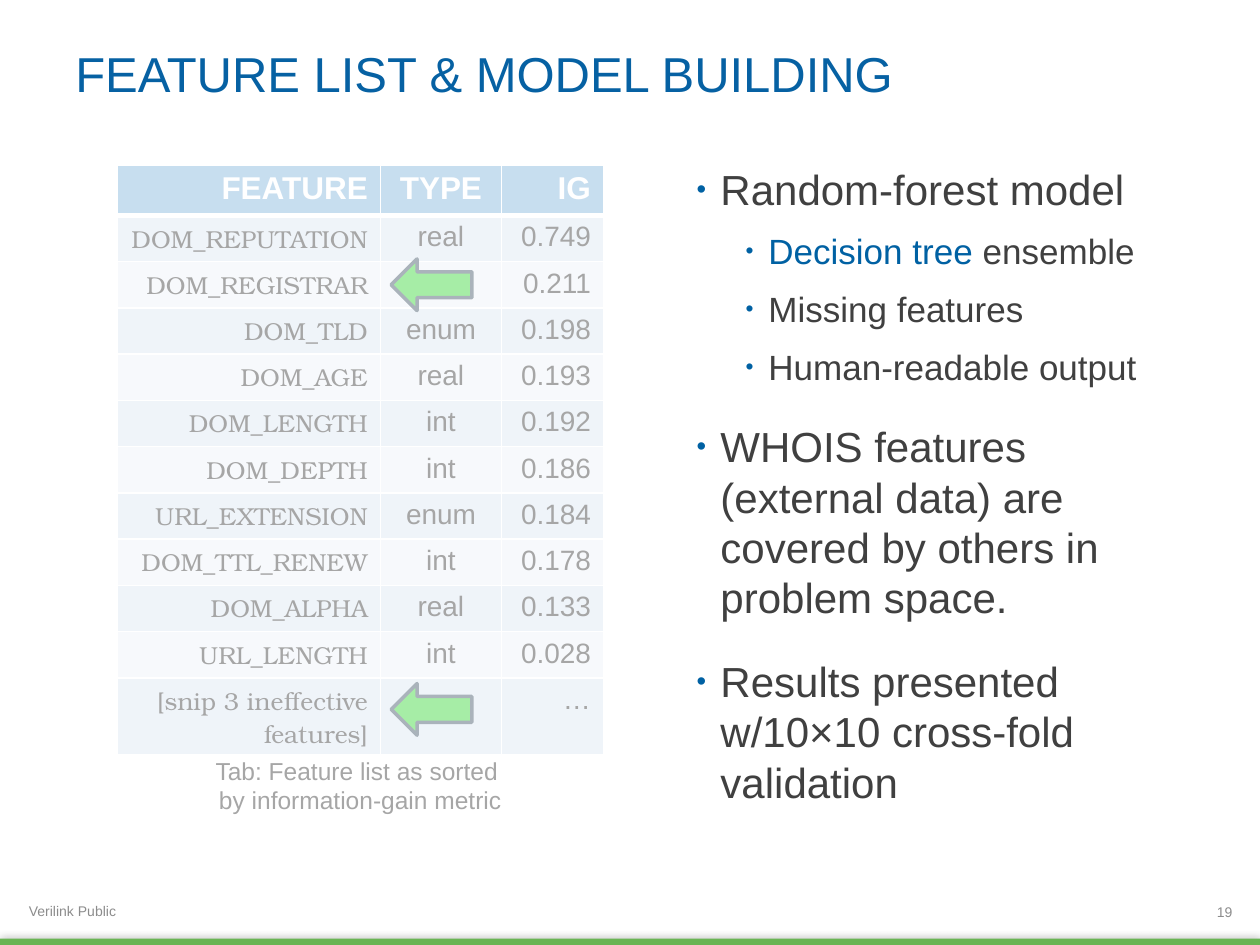
import pptx
import pptx.dml.color
import pptx.enum.shapes
import pptx.enum.text
import pptx.oxml
import pptx.oxml.ns
import pptx.util
from lxml import etree

Inches, Pt = pptx.util.Inches, pptx.util.Pt
ALIGN = pptx.enum.text.PP_ALIGN
ANCHOR = pptx.enum.text.MSO_ANCHOR
SHAPE = pptx.enum.shapes.MSO_SHAPE
qn = pptx.oxml.ns.qn

W, H = 10, 7.5
BLUE, DARK, GREY, WHITE, BLACK = "0061A3", "404040", "8C8C8C", "FFFFFF", "000000"
SANS, SERIF = "Arial", "TeX Gyre Bonum"
TABLE_LEFT, TABLE_TOP = 0.93, 1.31
COLUMNS = [2.09, 0.96, 0.81]
ROWS = [0.38] + [0.36] * 10 + [0.61]
COLUMN_ALIGN = [ALIGN.RIGHT, ALIGN.CENTER, ALIGN.RIGHT]
COLUMN_FONT = [(SERIF, 14), (SANS, 16), (SANS, 16)]

FEATURES = [
    ("FEATURE", "TYPE", "IG"),
    ("DOM_REPUTATION", "real", "0.749"),
    ("DOM_REGISTRAR", "", "0.211"),
    ("DOM_TLD", "enum", "0.198"),
    ("DOM_AGE", "real", "0.193"),
    ("DOM_LENGTH", "int", "0.192"),
    ("DOM_DEPTH", "int", "0.186"),
    ("URL_EXTENSION", "enum", "0.184"),
    ("DOM_TTL_RENEW", "int", "0.178"),
    ("DOM_ALPHA", "real", "0.133"),
    ("URL_LENGTH", "int", "0.028"),
    ("[snip 3 ineffective features]", "", "…"),
]

# level, space before, runs of (text, colour)
POINTS = [
    (0, 0, [("Random-forest model", DARK)]),
    (1, 9, [("Decision tree", BLUE), (" ensemble", DARK)]),
    (1, 9, [("Missing features", DARK)]),
    (1, 9, [("Human-readable output", DARK)]),
    (0, 19, [("WHOIS features (external data) are covered by others "
              "in problem space.", DARK)]),
    (0, 19, [("Results presented w/10×10 cross-fold validation", DARK)]),
]
# per level: left margin, hanging indent, text size
LEVELS = [(0.19, 0.19, 24), (0.57, 0.18, 20)]


def rgb(value):
    return pptx.dml.color.RGBColor.from_string(value)


def style(font, size, color, name=SANS, bold=False):
    font.size, font.name, font.bold = Pt(size), name, bold
    font.color.rgb = rgb(color)


def add_text(s, box, text, size, color, align=ALIGN.LEFT, anchor=ANCHOR.MIDDLE):
    tf = s.shapes.add_textbox(*map(Inches, box)).text_frame
    tf.word_wrap, tf.vertical_anchor = True, anchor
    p = tf.paragraphs[0]
    p.text, p.alignment = text, align
    for r in p.runs:
        style(r.font, size, color)


def add_shape(s, kind, box, fill, line=None):
    sp = s.shapes.add_shape(kind, *map(Inches, box))
    sp.shadow.inherit = False
    sp.fill.solid()
    sp.fill.fore_color.rgb = rgb(fill)
    if line:
        sp.line.color.rgb, sp.line.width = rgb(line), Pt(2)
    else:
        sp.line.fill.background()
    return sp


def add_glow_shadow(sp):
    """Soft shadow that spreads evenly around the shape."""
    effects = sp._element.spPr.find(qn("a:effectLst"))
    shadow = etree.SubElement(effects, qn("a:outerShdw"), blurRad=str(Pt(5)), dist="0")
    color = etree.SubElement(shadow, qn("a:srgbClr"), val=BLACK)
    etree.SubElement(color, qn("a:alpha"), val="40000")


def add_veil(s, box, opacity):
    """White sheet that fades whatever lies below it."""
    sp = add_shape(s, SHAPE.RECTANGLE, box, WHITE)
    color = sp._element.spPr.find(qn("a:solidFill"))[0]
    etree.SubElement(color, qn("a:alpha"), val=str(opacity * 1000))


def set_borders(cell, bottom):
    tcPr = cell._tc.get_or_add_tcPr()
    for i, (side, width) in enumerate(zip("LRTB", (1, 1, 1, bottom))):
        ln = etree.Element(qn("a:ln" + side), w=str(Pt(width)))
        fill = etree.SubElement(ln, qn("a:solidFill"))
        etree.SubElement(fill, qn("a:srgbClr"), val=WHITE)
        tcPr.insert(i, ln)


def fill_cell(cell, text, i, j):
    header = i == 0
    color = "61A1D4" if header else "D2E0EF" if i % 2 else "EAF0F7"
    cell.fill.solid()
    cell.fill.fore_color.rgb = rgb(color)
    set_borders(cell, 3 if header else 1)
    if not text:
        cell.margin_top = cell.margin_bottom = 0
        return
    p = cell.text_frame.paragraphs[0]
    p.text, p.alignment = text, COLUMN_ALIGN[j]
    name, size = (SANS, 18) if header else COLUMN_FONT[j]
    style(p.runs[0].font, size, WHITE if header else BLACK, name, header)


def add_feature_table(s):
    table = s.shapes.add_table(
        len(ROWS), len(COLUMNS), Inches(TABLE_LEFT), Inches(TABLE_TOP),
        Inches(sum(COLUMNS)), Inches(sum(ROWS))).table
    for column, width in zip(table.columns, COLUMNS):
        column.width = Inches(width)
    for i, row in enumerate(FEATURES):
        table.rows[i].height = Inches(ROWS[i])
        for j, text in enumerate(row):
            fill_cell(table.cell(i, j), text, i, j)


def add_bullet(p, margin, hang):
    pPr = p._p.get_or_add_pPr()
    pPr.set("marL", str(Inches(margin)))
    pPr.set("indent", str(-Inches(hang)))
    color = etree.SubElement(pPr, qn("a:buClr"))
    etree.SubElement(color, qn("a:srgbClr"), val=BLUE)
    etree.SubElement(pPr, qn("a:buSzPct"), val="65000")
    etree.SubElement(pPr, qn("a:buFont"), typeface=SANS)
    etree.SubElement(pPr, qn("a:buChar"), char="•")


def add_points(s, box):
    tf = s.shapes.add_textbox(*map(Inches, box)).text_frame
    tf.word_wrap = True
    for i, (level, before, runs) in enumerate(POINTS):
        p = tf.add_paragraph() if i else tf.paragraphs[0]
        margin, hang, size = LEVELS[level]
        p.level, p.space_before = level, Pt(before)
        add_bullet(p, margin, hang)
        for text, color in runs:
            r = p.add_run()
            r.text = text
            style(r.font, size, color)


def main():
    prs = pptx.Presentation()
    prs.slide_width, prs.slide_height = Inches(W), Inches(H)
    s = prs.slides.add_slide(prs.slide_layouts[6])

    bar = add_shape(s, SHAPE.RECTANGLE, (0, H - 0.05, W, 0.05), "69B453")
    add_glow_shadow(bar)
    add_text(s, (0.13, 7.13, 3.32, 0.2), "Verilink Public", 8, GREY)
    add_text(s, (0.5, 0.27, W - 1, 0.61), "FEATURE LIST & MODEL BUILDING", 28, "0661A3")
    add_points(s, (5.43, 1.25, 4.03, 5.21))
    add_text(s, (9.49, 7.15, 0.39, 0.17), "19", 8, GREY, ALIGN.RIGHT)

    add_feature_table(s)
    add_text(s, (TABLE_LEFT, 5.95, sum(COLUMNS), 0.57),
             "Tab: Feature list as sorted \vby information-gain metric",
             14, BLACK, ALIGN.CENTER, ANCHOR.TOP)
    for top in (1.94, 5.31):
        arrow = add_shape(s, SHAPE.DOWN_ARROW, (3.22, top, 0.41, 0.64), "00CC00", "0E273E")
        arrow.rotation = 90
    add_veil(s, (0.5, 1.15, 4.8, 5.37), 65)

    prs.save("out.pptx")


if __name__ == "__main__":
    main()
